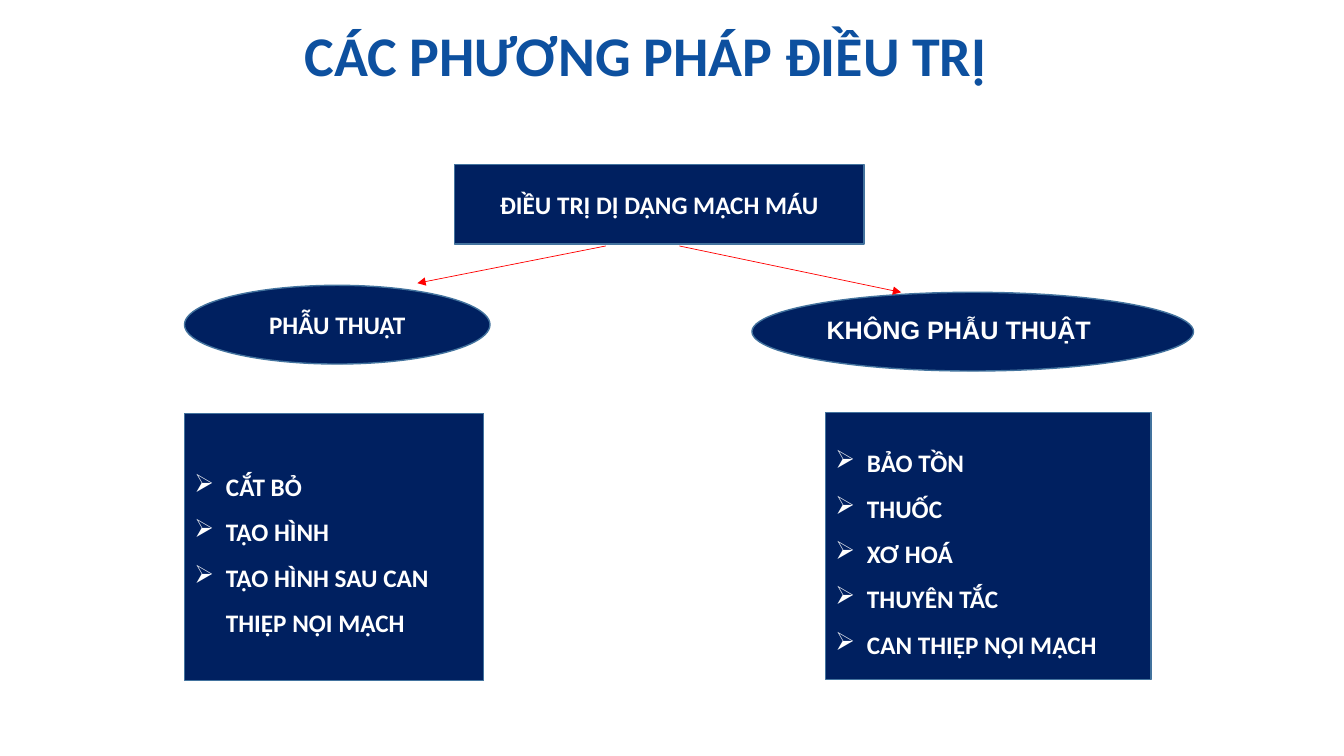
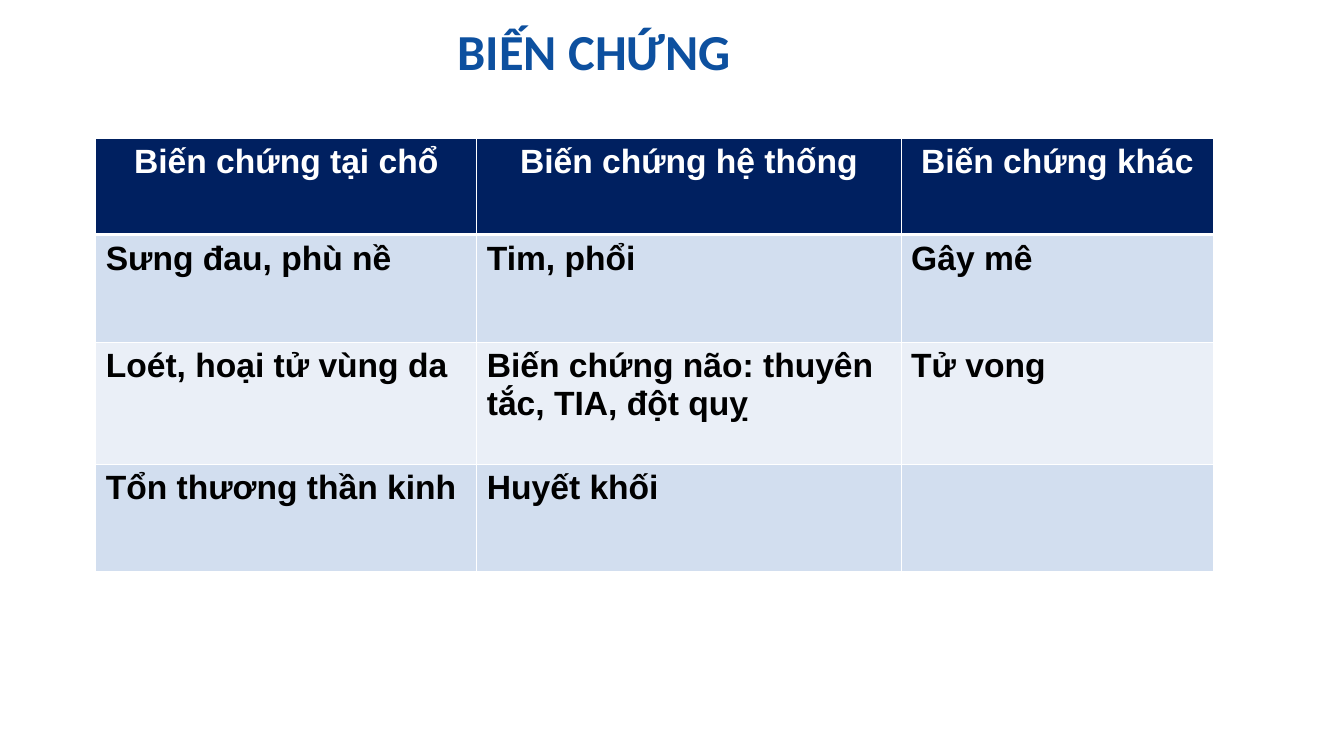
import pptx
import pptx.util
import pptx.dml.color
import pptx.enum.shapes
import pptx.enum.text
import pptx.oxml.ns
import lxml.etree

Pt = pptx.util.Pt
SHAPE = pptx.enum.shapes.MSO_SHAPE
ALIGN = pptx.enum.text.PP_ALIGN
ANCHOR = pptx.enum.text.MSO_ANCHOR
COLORS = {
    "title": "0D509F", "navy": "002060", "edge": "43739E", "arrow": "FF0000",
    "white": "FFFFFF", "black": "000000", "odd": "D2DEEF", "even": "EAEFF7",
}
INDENT = 22.5


def color(name):
    return pptx.dml.color.RGBColor.from_string(COLORS[name])


def add_tag(parent, tag, **attrs):
    return lxml.etree.SubElement(parent, pptx.oxml.ns.qn(tag), attrs)


def write(frame, *lines, size=18, font="Calibri", ink="white",
          align=ALIGN.LEFT, space=1.0, bullet=None):
    """Put each line in its own bold paragraph."""
    frame.word_wrap = True
    for i, line in enumerate(lines):
        para = frame.paragraphs[0] if i == 0 else frame.add_paragraph()
        if bullet:
            props = para._p.get_or_add_pPr()
            props.set("marL", str(Pt(INDENT)))
            props.set("indent", str(-Pt(INDENT)))
            add_tag(props, "a:buChar", char=bullet)
        para.alignment = align
        para.line_spacing = space
        run = para.add_run()
        run.text = line
        run.font.size = Pt(size)
        run.font.name = font
        run.font.bold = True
        run.font.color.rgb = color(ink)


def add_title(slide, box, text, size, align):
    frame = slide.shapes.add_textbox(*map(Pt, box)).text_frame
    write(frame, text, size=size, ink="title", align=align, space=0.9)


def add_node(slide, kind, box, *lines, **style):
    node = slide.shapes.add_shape(kind, *map(Pt, box))
    node.shadow.inherit = False
    node.fill.solid()
    node.fill.fore_color.rgb = color("navy")
    node.line.color.rgb = color("edge")
    node.line.width = Pt(1)
    node.text_frame.vertical_anchor = ANCHOR.MIDDLE
    write(node.text_frame, *lines, **style)


def add_arrow(slide, *ends):
    arrow = slide.shapes.add_connector(
        pptx.enum.shapes.MSO_CONNECTOR.STRAIGHT, *map(Pt, ends))
    arrow.line.color.rgb = color("arrow")
    arrow.line.width = Pt(0.5)
    add_tag(arrow.line._get_or_add_ln(), "a:tailEnd", type="triangle")
    add_tag(arrow._element.spPr, "a:effectLst")


def add_tree(slide, x, y):
    """Draw the treatment tree with its top left corner at x, y."""
    add_node(slide, SHAPE.OVAL, (x + 405.3, y + 91.4, 315.4, 56.2),
             "KHÔNG PHẪU THUẬT", font="Arial", space=0.9)
    add_node(slide, SHAPE.RECTANGLE, (x + 193, y, 292.3, 56.9),
             "ĐIỀU TRỊ DỊ DẠNG MẠCH MÁU", align=ALIGN.CENTER)
    add_node(slide, SHAPE.OVAL, (x, y + 86.4, 218.2, 56.2),
             "PHẪU THUẬT", align=ALIGN.CENTER)
    lists = (
        (0, 177.8, 213.8, ("CẮT BỎ", "TẠO HÌNH", "TẠO HÌNH SAU CAN THIỆP NỘI MẠCH")),
        (457.9, 177.1, 232.6,
         ("BẢO TỒN", "THUỐC", "XƠ HOÁ", "THUYÊN TẮC", "CAN THIỆP NỘI MẠCH")),
    )
    for left, top, width, lines in lists:
        add_node(slide, SHAPE.RECTANGLE, (x + left, y + top, width, 190.8),
                 *lines, space=1.5, bullet="➢")
    for start, end, drop in ((353.5, 511.9, 91.4), (300.9, 166.3, 84.9)):
        add_arrow(slide, x + start, y + 58.3, x + end, y + drop)


def add_edges(cell, **widths):
    """Give the cell white borders; call before filling it."""
    props = cell._tc.get_or_add_tcPr()
    for side, width in widths.items():
        edge = add_tag(props, f"a:ln{side}", w=str(Pt(width)))
        fill = add_tag(edge, "a:solidFill")
        add_tag(fill, "a:srgbClr", val=COLORS["white"])


def add_grid(slide, x, y, cols, rows, data):
    grid = slide.shapes.add_table(
        len(rows), len(cols), Pt(x), Pt(y), Pt(sum(cols)), Pt(sum(rows))).table
    for col, width in zip(grid.columns, cols):
        col.width = Pt(width)
    for r, (height, texts) in enumerate(zip(rows, data)):
        grid.rows[r].height = Pt(height)
        head = r == 0
        for c, text in enumerate(texts):
            cell = grid.cell(r, c)
            add_edges(cell, L=1, R=1, T=3 if r == 1 else 1, B=3 if head else 1)
            cell.fill.solid()
            cell.fill.fore_color.rgb = color(
                "navy" if head else "odd" if r % 2 else "even")
            if text:
                write(cell.text_frame, text, size=24, font="Arial",
                      ink="white" if head else "black",
                      align=ALIGN.CENTER if head else ALIGN.LEFT)


def main():
    deck = pptx.Presentation()
    deck.slide_width, deck.slide_height = Pt(960), Pt(540)
    blank = deck.slide_layouts[6]

    slide = deck.slides.add_slide(blank)
    add_title(slide, (119.5, 16.6, 683.3, 57.6),
              "CÁC PHƯƠNG PHÁP ĐIỀU TRỊ", 40, ALIGN.CENTER)
    add_tree(slide, 131.8, 117.4)

    slide = deck.slides.add_slide(blank)
    add_title(slide, (319.9, 15.8, 303, 55.4), "BIẾN CHỨNG", 36, ALIGN.LEFT)
    add_grid(slide, 68.4, 98.6, (272.2, 303.1, 223.2), (69, 77, 87, 77), (
        ("Biến chứng tại chổ", "Biến chứng hệ thống", "Biến chứng khác"),
        ("Sưng đau, phù nề", "Tim, phổi", "Gây mê"),
        ("Loét, hoại tử vùng da", "Biến chứng não: thuyên tắc, TIA, đột quỵ",
         "Tử vong"),
        ("Tổn thương thần kinh", "Huyết khối", ""),
    ))
    deck.save("out.pptx")


if __name__ == "__main__":
    main()
